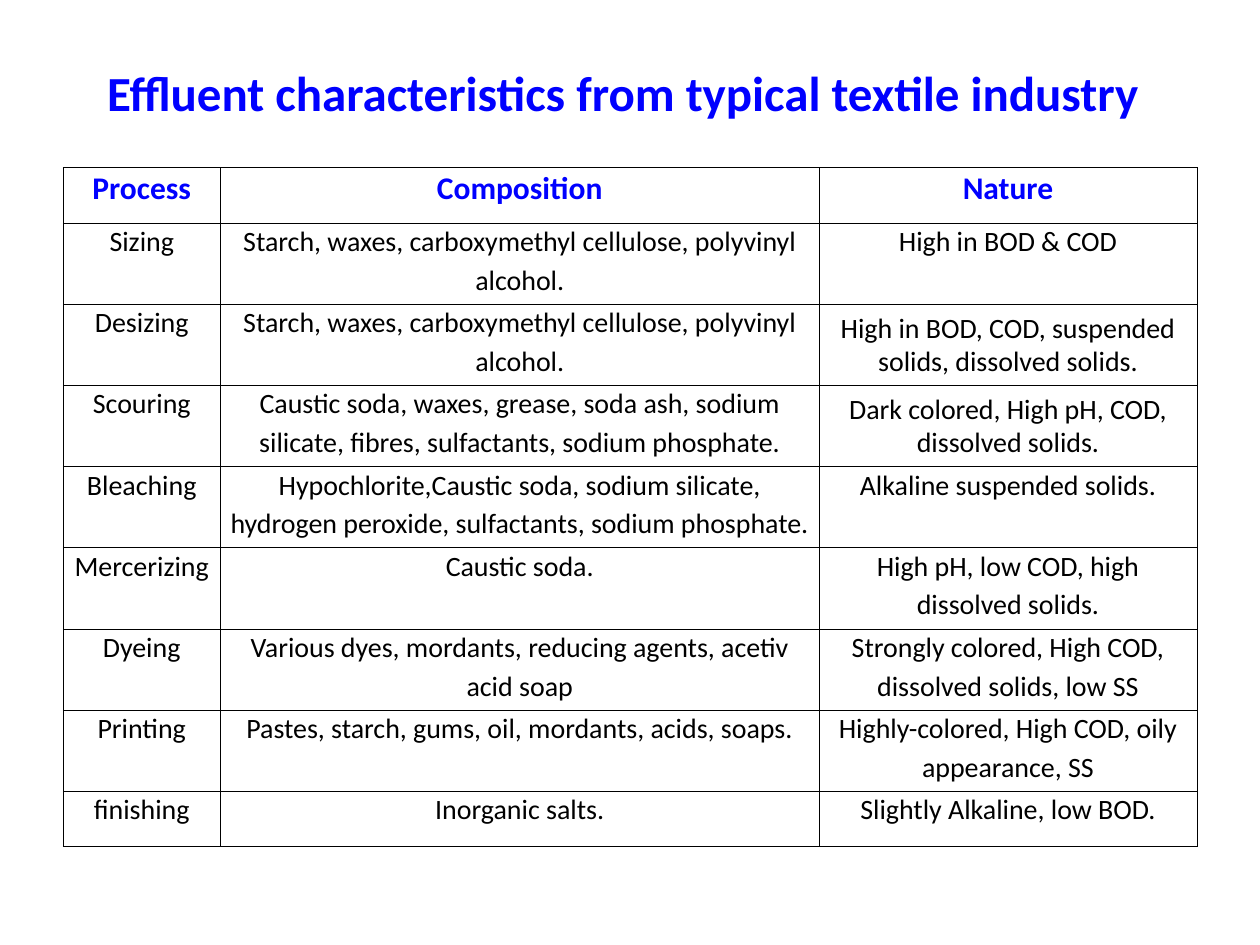
import dataclasses

import pptx
import pptx.dml.color
import pptx.enum.text
import pptx.oxml
import pptx.oxml.ns
import pptx.util

Inches = pptx.util.Inches
Pt = pptx.util.Pt
RGB = pptx.dml.color.RGBColor
Align = pptx.enum.text.PP_ALIGN
Anchor = pptx.enum.text.MSO_ANCHOR


@dataclasses.dataclass(frozen=True)
class Theme:
    """Colours and type sizes of the slide."""
    font: str = "Calibri"
    blue: str = "0000FF"
    black: str = "000000"
    title: int = 28
    head: int = 18
    body: int = 16
    snug: int = 19
    gap: float = 6.1


THEME = Theme()
COLS = (1.25, 4.75, 3)
HEIGHT = 5.39
SHORT = 0.44
SNUG = {(2, 2), (3, 2)}
ROWS = (
    ("Process", "Composition", "Nature"),
    ("Sizing",
     "Starch, waxes, carboxymethyl cellulose, polyvinyl\nalcohol.",
     "High in BOD & COD"),
    ("Desizing",
     "Starch, waxes, carboxymethyl cellulose, polyvinyl\nalcohol.",
     "High in BOD, COD, suspended solids, dissolved solids."),
    ("Scouring",
     "Caustic soda, waxes, grease, soda ash, sodium\n"
     "silicate, fibres, sulfactants, sodium phosphate.",
     "Dark colored, High pH, COD, dissolved solids."),
    ("Bleaching",
     "Hypochlorite,Caustic soda, sodium silicate,\n"
     "hydrogen peroxide, sulfactants, sodium phosphate.",
     "Alkaline suspended solids."),
    ("Mercerizing", "Caustic soda.",
     "High pH, low COD, high\ndissolved solids."),
    ("Dyeing",
     "Various dyes, mordants, reducing agents, acetiv\nacid soap",
     "Strongly colored, High COD,\ndissolved solids, low SS"),
    ("Printing", "Pastes, starch, gums, oil, mordants, acids, soaps.",
     "Highly-colored, High COD, oily\nappearance, SS"),
    ("finishing", "Inorganic salts.", "Slightly Alkaline, low BOD."),
)


def write(frame, text, size=THEME.body, color=THEME.black, bold=False,
          align=Align.CENTER, line=None):
    """Fill a text frame with one paragraph per line of text."""
    frame.text = text
    for i, para in enumerate(frame.paragraphs):
        para.alignment = align
        para.line_spacing = Pt(line or size)
        para.space_before = Pt(THEME.gap if i else 0)
        for run in para.runs:
            run.font.name = THEME.font
            run.font.size = Pt(size)
            run.font.bold = bold
            run.font.color.rgb = RGB.from_string(color)


def border(cell):
    """Draw a thin line on all four sides of a cell."""
    props = cell._tc.get_or_add_tcPr()
    space = pptx.oxml.ns.nsdecls("a")
    for i, side in enumerate(("lnL", "lnR", "lnT", "lnB")):
        props.insert(i, pptx.oxml.parse_xml(
            f'<a:{side} {space} w="{Pt(0.25)}"><a:solidFill>'
            f'<a:srgbClr val="{THEME.black}"/></a:solidFill></a:{side}>'))


def add_title(slide, text):
    """Place and format the title."""
    title = slide.shapes.title
    title.left, title.top = Inches(0.85), Inches(0.57)
    title.width, title.height = Inches(8.26), Inches(0.39)
    frame = title.text_frame
    frame.auto_size = pptx.enum.text.MSO_AUTO_SIZE.NONE
    frame.word_wrap = True
    frame.vertical_anchor = Anchor.TOP
    frame.margin_left = frame.margin_right = 0
    frame.margin_top = frame.margin_bottom = 0
    write(frame, text, size=THEME.title, color=THEME.blue, bold=True,
          align=Align.LEFT)


def add_cell(cell, text, head=False, snug=False):
    """Format one table cell and write its text."""
    cell.margin_left = cell.margin_right = cell.margin_bottom = 0
    cell.margin_top = Pt(5.1 if head else 4.7)
    cell.vertical_anchor = Anchor.TOP
    cell.fill.background()
    border(cell)
    if head:
        write(cell.text_frame, text, size=THEME.head, color=THEME.blue,
              bold=True)
    else:
        write(cell.text_frame, text, line=THEME.snug if snug else None)


def add_grid(slide):
    """Add the table of processes."""
    last = len(ROWS) - 1
    grid = slide.shapes.add_table(
        len(ROWS), len(COLS), Inches(0.5), Inches(1.33),
        Inches(sum(COLS)), Inches(HEIGHT)).table
    grid.first_row = grid.horz_banding = False
    for col, width in zip(grid.columns, COLS):
        col.width = Inches(width)
    tall = (HEIGHT - 2 * SHORT) / (last - 1)
    for r, texts in enumerate(ROWS):
        grid.rows[r].height = Inches(SHORT if r in (0, last) else tall)
        for c, text in enumerate(texts):
            add_cell(grid.cell(r, c), text, head=r == 0, snug=(r, c) in SNUG)


def main():
    """Build and save the slide."""
    deck = pptx.Presentation()
    deck.slide_width, deck.slide_height = Inches(10), Inches(7.5)
    slide = deck.slides.add_slide(deck.slide_layouts[5])
    add_title(slide, "Effluent characteristics from typical textile industry")
    add_grid(slide)
    deck.save("out.pptx")


if __name__ == "__main__":
    main()
